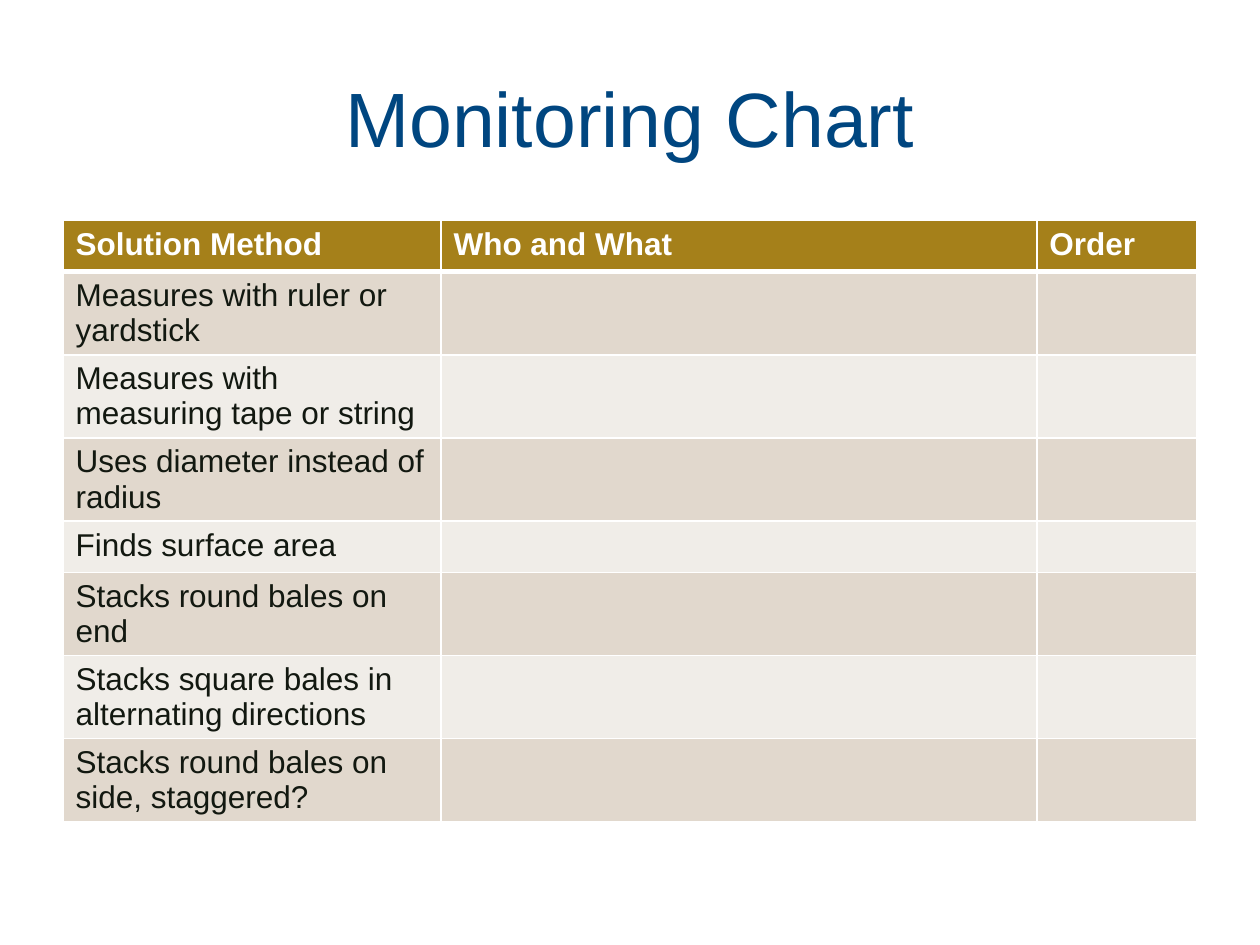
from lxml.etree import SubElement
from pptx import Presentation
from pptx.dml.color import RGBColor
from pptx.enum.text import MSO_ANCHOR, PP_ALIGN
from pptx.oxml.ns import qn
from pptx.util import Pt

TITLE = "Monitoring Chart"
HEADERS = ["Solution Method", "Who and What", "Order"]
METHODS = [
    "Measures with ruler or yardstick",
    "Measures with measuring tape or string",
    "Uses diameter instead of radius",
    "Finds surface area",
    "Stacks round bales on end",
    "Stacks square bales in alternating directions",
    "Stacks round bales on side, staggered?",
]
COL_WIDTHS = [216, 340.5, 91.5]
ROW_HEIGHT = 29.2
LEFT, WIDTH = 36, 648
FONT = "Arial"

BLUE = RGBColor(0x00, 0x46, 0x80)
GOLD = RGBColor(0xA5, 0x80, 0x1A)
WHITE = RGBColor(0xFF, 0xFF, 0xFF)
INK = RGBColor(0x12, 0x18, 0x10)
BANDS = [RGBColor(0xE1, 0xD8, 0xCD), RGBColor(0xF0, 0xED, 0xE8)]


def add_run(p, text, size, color, bold=False):
    r = p.add_run()
    r.text = text
    r.font.name = FONT
    r.font.size = Pt(size)
    r.font.bold = bold
    r.font.color.rgb = color


def add_borders(cell, top, bottom):
    """Draw white cell borders; side lines are 1 pt wide."""
    tc_pr = cell._tc.get_or_add_tcPr()
    for side, width in (("L", 1), ("R", 1), ("T", top), ("B", bottom)):
        ln = SubElement(tc_pr, qn(f"a:ln{side}"), w=str(Pt(width)))
        fill = SubElement(ln, qn("a:solidFill"))
        SubElement(fill, qn("a:srgbClr"), val=str(WHITE))


prs = Presentation()
prs.slide_width, prs.slide_height = Pt(720), Pt(540)
s = prs.slides.add_slide(prs.slide_layouts[5])

title = s.shapes.title
title.left, title.top, title.width, title.height = Pt(LEFT), Pt(21.6), Pt(WIDTH), Pt(90)
tf = title.text_frame
tf.vertical_anchor = MSO_ANCHOR.MIDDLE
p = tf.paragraphs[0]
p.alignment = PP_ALIGN.CENTER
add_run(p, TITLE, 44, BLUE)

rows = [HEADERS] + [[method, "", ""] for method in METHODS]
table = s.shapes.add_table(len(rows), len(HEADERS), Pt(LEFT), Pt(126),
                           Pt(WIDTH), Pt(ROW_HEIGHT * len(rows))).table
for column, width in zip(table.columns, COL_WIDTHS):
    column.width = Pt(width)

for i, row in enumerate(rows):
    table.rows[i].height = Pt(ROW_HEIGHT)
    is_header = i == 0
    for j, text in enumerate(row):
        cell = table.cell(i, j)
        add_borders(cell, top=3 if i == 1 else 1, bottom=3 if is_header else 1)
        cell.fill.solid()
        cell.fill.fore_color.rgb = GOLD if is_header else BANDS[(i - 1) % 2]
        if text:
            add_run(cell.text_frame.paragraphs[0], text, 18,
                    WHITE if is_header else INK, bold=is_header)

prs.save("out.pptx")
